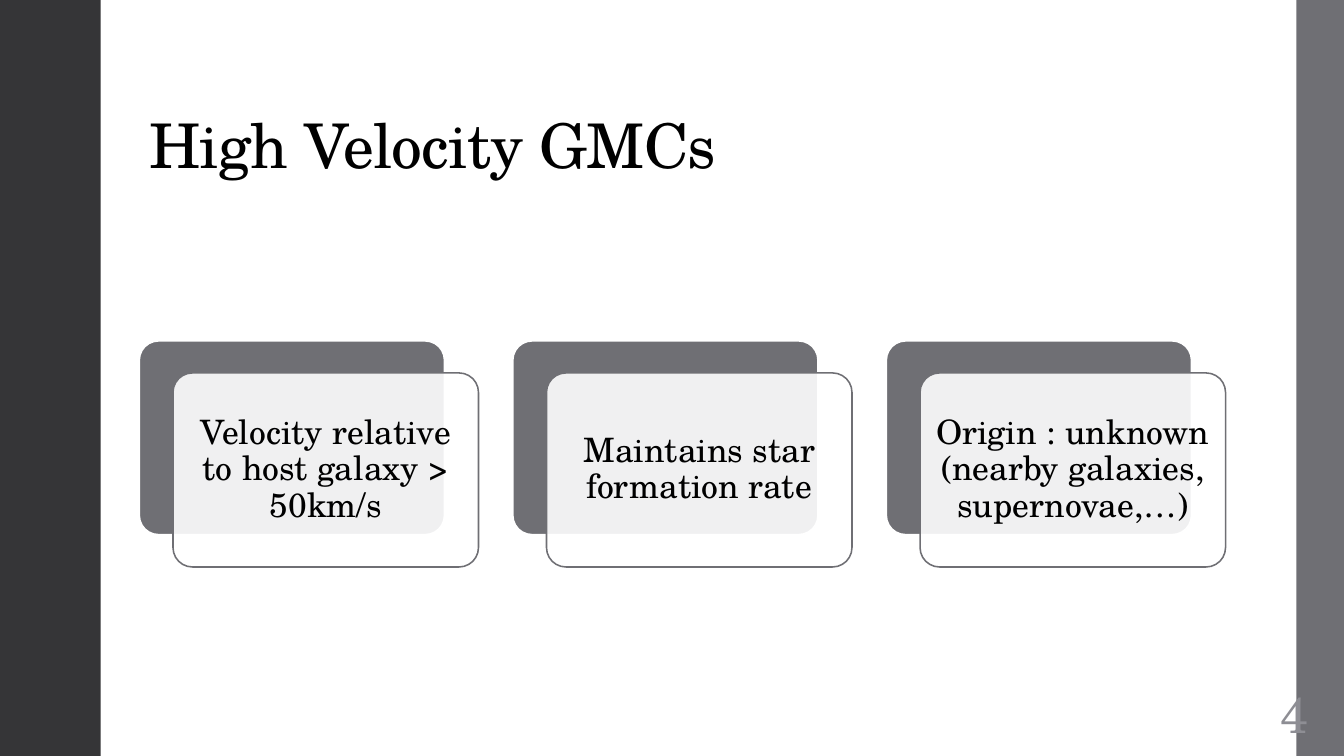
from pptx import Presentation
from pptx.dml.color import RGBColor
from pptx.enum.shapes import MSO_SHAPE
from pptx.enum.text import MSO_ANCHOR, PP_ALIGN
from pptx.oxml.ns import qn
from pptx.util import Pt
from lxml.etree import SubElement

COLORS = {
    "dark": "353537",
    "gray": "6F6F74",
    "white": "FFFFFF",
    "black": "000000",
    "number": "8E8E94",
}
FONT = "TeX Gyre Schola"
CARDS = [
    "Velocity relative to host galaxy > 50km/s",
    "Maintains star formation rate",
    "Origin : unknown (nearby galaxies, supernovae,…)",
]
CARD_LEFT, CARD_TOP, CARD_STEP = 99.4, 243.4, 266.8
CARD_WIDTH, CARD_HEIGHT = 218.2, 138.6
PANEL_SHIFT_X, PANEL_SHIFT_Y = 24.2, 23


class SlideBuilder:
    """Adds styled bars, cards and text to one slide."""

    def __init__(self, slide):
        self.slide = slide

    def color(self, name):
        return RGBColor.from_string(COLORS[name])

    def shape(self, kind, box, fill, line=None, line_width=0):
        shape = self.slide.shapes.add_shape(kind, *map(Pt, box))
        shape.shadow.inherit = False
        shape.fill.solid()
        shape.fill.fore_color.rgb = self.color(fill)
        if line:
            shape.line.color.rgb = self.color(line)
            shape.line.width = Pt(line_width)
        else:
            shape.line.fill.background()
        return shape

    def bar(self, left, width, fill):
        self.shape(MSO_SHAPE.RECTANGLE, (left, 0, width, 540), fill)

    def fill_text(self, shape, text, size, color="black",
                  anchor=MSO_ANCHOR.MIDDLE, align=PP_ALIGN.CENTER,
                  spacing=0.9, inset_x=6, inset_y=7.2):
        frame = shape.text_frame
        frame_format = {
            "word_wrap": True, "vertical_anchor": anchor,
            "margin_left": Pt(inset_x), "margin_right": Pt(inset_x),
            "margin_top": Pt(inset_y), "margin_bottom": Pt(inset_y),
        }
        for name, value in frame_format.items():
            setattr(frame, name, value)
        paragraph = frame.paragraphs[0]
        paragraph.alignment = align
        paragraph.line_spacing = spacing
        run = paragraph.add_run()
        run.text = text
        for name, value in {"name": FONT, "size": Pt(size)}.items():
            setattr(run.font, name, value)
        run.font.color.rgb = self.color(color)
        return run

    def text(self, box, text, size, **style):
        text_box = self.slide.shapes.add_textbox(*map(Pt, box))
        return self.fill_text(text_box, text, size, **style)

    def title(self, text):
        run = self.text((99.4, 28.8, 776.2, 104.4), text, 44,
                        anchor=MSO_ANCHOR.BOTTOM, align=PP_ALIGN.LEFT,
                        inset_x=7.2, inset_y=3.6)
        run.font._element.set("spc", "-50")

    def card(self, left, text):
        back = self.shape(MSO_SHAPE.ROUNDED_RECTANGLE,
                          (left, CARD_TOP, CARD_WIDTH, CARD_HEIGHT),
                          "gray", "white", 1.35)
        panel = self.shape(MSO_SHAPE.ROUNDED_RECTANGLE,
                           (left + PANEL_SHIFT_X, CARD_TOP + PANEL_SHIFT_Y,
                            CARD_WIDTH, CARD_HEIGHT),
                           "white", "gray", 1.1)
        for shape in (back, panel):
            shape.adjustments[0] = 0.1
        fill_color = panel._element.spPr.find(qn("a:solidFill"))[0]
        SubElement(fill_color, qn("a:alpha"), val="90000")
        self.fill_text(panel, text, 24)


def main():
    presentation = Presentation()
    presentation.slide_width = Pt(960)
    presentation.slide_height = Pt(540)
    builder = SlideBuilder(
        presentation.slides.add_slide(presentation.slide_layouts[6]))
    builder.title("High Velocity GMCs")
    builder.bar(0, 72, "dark")
    builder.bar(926, 34, "gray")
    for index, text in enumerate(CARDS):
        builder.card(CARD_LEFT + index * CARD_STEP, text)
    builder.text((889, 486, 72, 46.8), "4", 36, color="number",
                 spacing=1, inset_x=3.6, inset_y=3.6)
    presentation.save("out.pptx")


if __name__ == "__main__":
    main()
